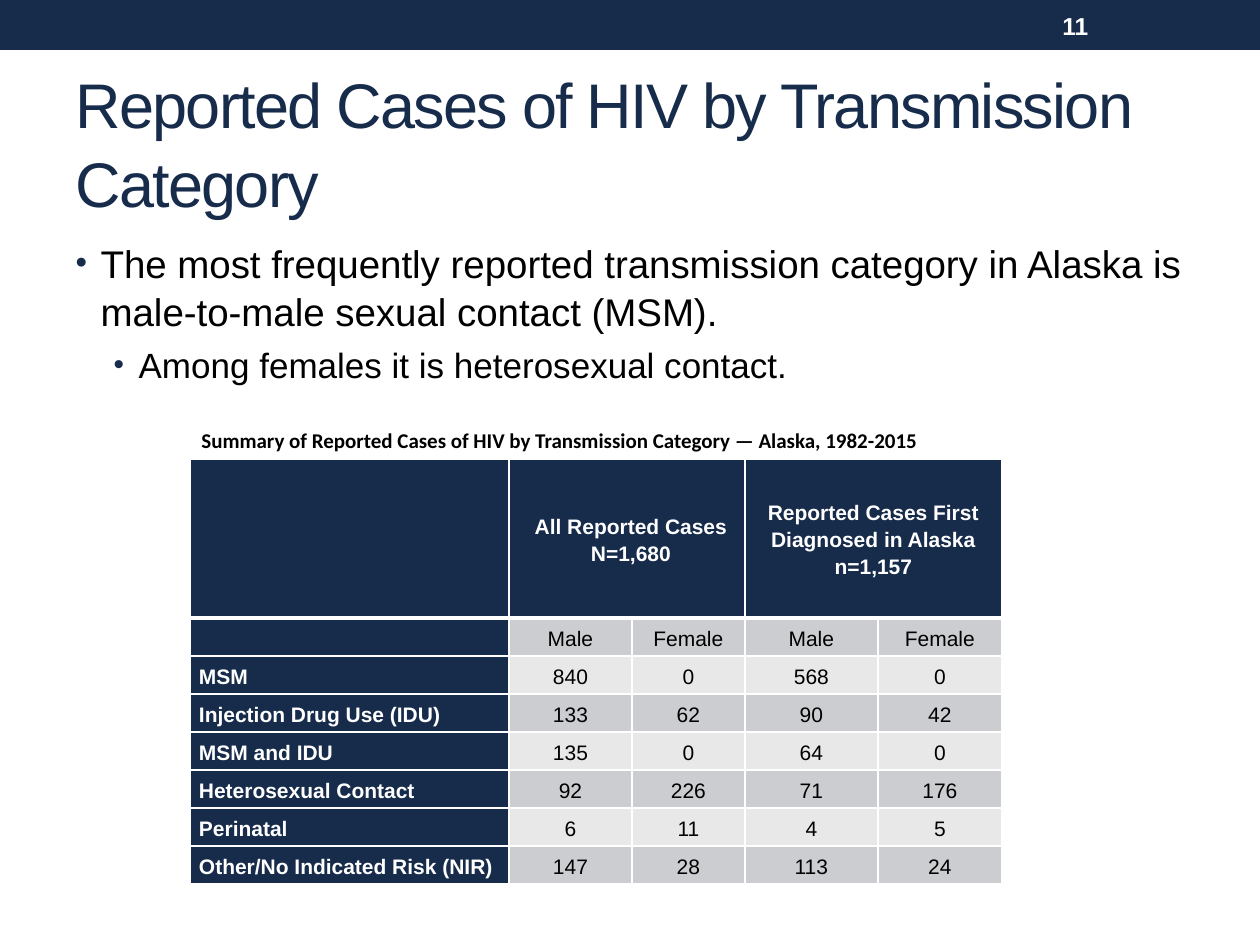
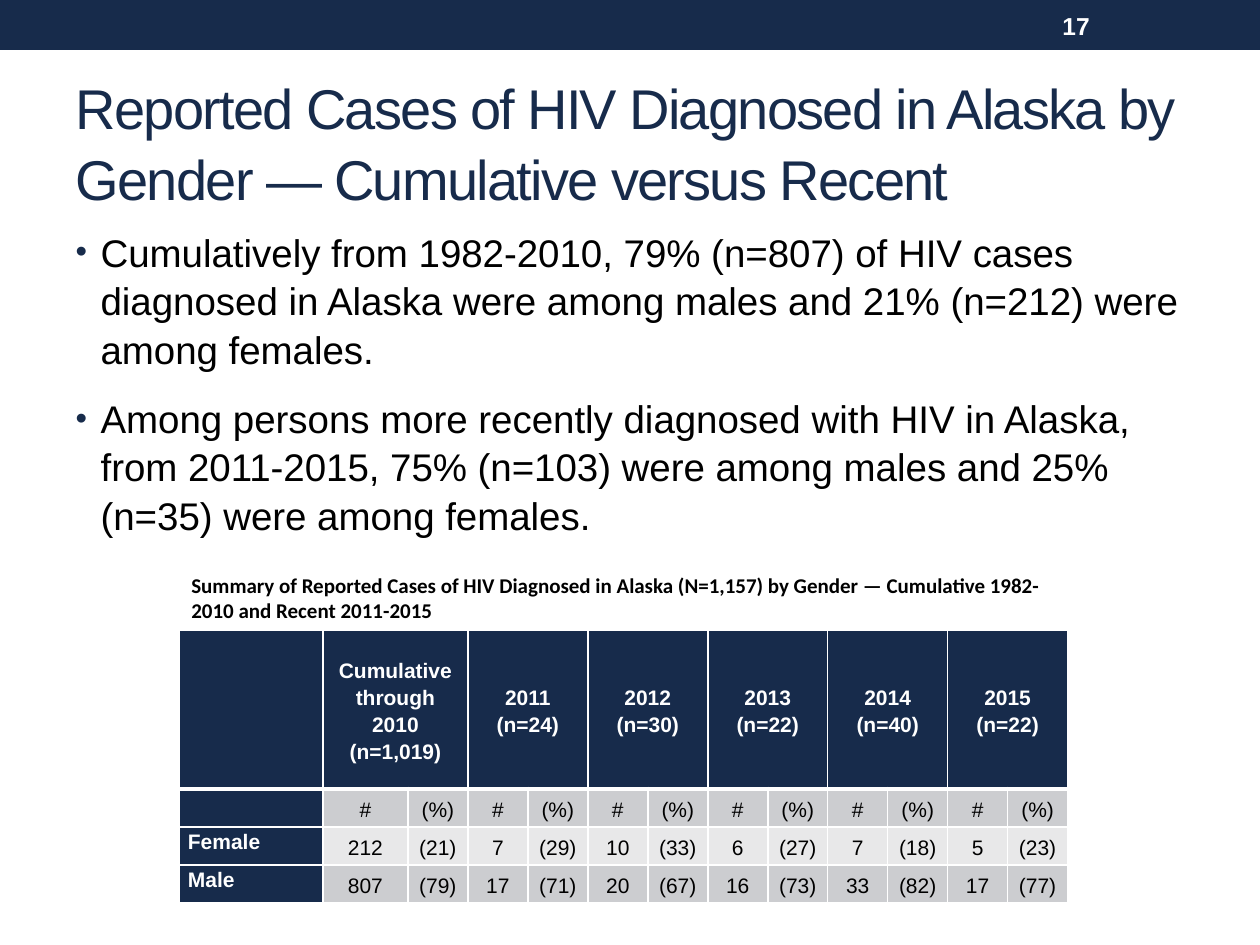
import pptx
import pptx.dml.color
import pptx.enum.shapes
import pptx.enum.text
import pptx.oxml
import pptx.oxml.ns
import pptx.util

PX = 7257.14  # EMU per px, 126 px to the inch
NAVY, WHITE, BLACK = "172B4B", "FFFFFF", "000000"
BANDS = ("CCCDD0", "E8E8E9")
HEADER_HEIGHT, ROW_HEIGHT = 159, 38
ALIGN = pptx.enum.text.PP_ALIGN
ANCHOR = pptx.enum.text.MSO_ANCHOR


def px(*lengths):
    return [pptx.util.Emu(round(length * PX)) for length in lengths]


def write(frame, text, colour, font, paragraph_format=None, **frame_format):
    """Fill a text frame or cell, one paragraph a line, in one format."""
    for name, value in frame_format.items():
        setattr(frame, name, value)
    frame.text = text
    for paragraph in getattr(frame, "text_frame", frame).paragraphs:
        for name, value in (paragraph_format or {}).items():
            setattr(paragraph, name, value)
        for run in paragraph.runs:
            run.font.color.rgb = pptx.dml.color.RGBColor.from_string(colour)
            for name, value in font.items():
                setattr(run.font, name, value)
        if not paragraph.runs:
            paragraph._p.get_or_add_endParaRPr().set("sz", str(font["size"].centipoints))


def add_xml(parent, *fragments):
    namespace = pptx.oxml.ns.nsdecls("a")
    for fragment in fragments:
        tag, rest = fragment.split(" ", 1)
        parent.append(pptx.oxml.parse_xml(f"<a:{tag} {namespace} {rest}"))


def font_format(size, bold=False, name="Arial"):
    return {"size": pptx.util.Pt(size), "bold": bold, "name": name}


slides = [
    {
        "number": "11",
        "title": "Reported Cases of HIV by Transmission Category",
        "title_size": 36,
        "body_box": (63, 231, 1134, 179),
        "space_before": 4,
        "bullets": [
            (0, "The most frequently reported transmission category in Alaska is "
                "male-to-male sexual contact (MSM)."),
            (1, "Among females it is heterosexual contact."),
        ],
        "caption": "Summary of Reported Cases of HIV by Transmission Category — Alaska, 1982-2015",
        "caption_box": (189, 421, 750, 38),
        "table_corner": (190, 459),
        "columns": [319, 123, 113, 133, 124],
        "header_indents": [8, 0],
        "headers": ["All Reported Cases\nN=1,680",
                    "Reported Cases First Diagnosed in Alaska\nn=1,157"],
        "label_anchor": ANCHOR.MIDDLE,
        "rows": [
            ["", "Male", "Female", "Male", "Female"],
            ["MSM", "840", "0", "568", "0"],
            ["Injection Drug Use (IDU)", "133", "62", "90", "42"],
            ["MSM and IDU", "135", "0", "64", "0"],
            ["Heterosexual Contact", "92", "226", "71", "176"],
            ["Perinatal", "6", "11", "4", "5"],
            ["Other/No Indicated Risk (NIR)", "147", "28", "113", "24"],
        ],
    },
    {
        "number": "17",
        "title": "Reported Cases of HIV Diagnosed in Alaska by Gender — Cumulative versus Recent",
        "title_size": 32,
        "body_box": (63, 220, 1134, 345),
        "space_before": 12,
        "bullets": [
            (0, "Cumulatively from 1982-2010, 79% (n=807) of HIV cases diagnosed in Alaska "
                "were among males and 21% (n=212) were among females."),
            (0, "Among persons more recently diagnosed with HIV in Alaska, from 2011-2015, "
                "75% (n=103) were among males and 25% (n=35) were among females."),
        ],
        "caption": "Summary of Reported Cases of HIV Diagnosed in Alaska (N=1,157) by Gender — "
                   "Cumulative 1982-2010 and Recent 2011-2015",
        "caption_box": (179, 566, 882, 63),
        "table_corner": (179, 630),
        "columns": [144, 85] + [60] * 11,
        "header_indents": [0] * 6,
        "headers": ["Cumulative through 2010 (n=1,019)", "2011\n(n=24)", "2012\n(n=30)",
                    "2013\n(n=22)", "2014\n(n=40)", "2015\n(n=22)"],
        "label_anchor": ANCHOR.TOP,
        "rows": [
            [""] + ["#", "(%)"] * 6,
            ["Female", "212", "(21)", "7", "(29)", "10", "(33)", "6", "(27)",
             "7", "(18)", "5", "(23)"],
            ["Male", "807", "(79)", "17", "(71)", "20", "(67)", "16", "(73)",
             "33", "(82)", "17", "(77)"],
        ],
    },
]

presentation = pptx.Presentation()
presentation.slide_width, presentation.slide_height = px(1260, 945)
layout = presentation.slide_layouts[1]
navy = pptx.dml.color.RGBColor.from_string(NAVY)

for index, content in enumerate(slides):
    slide = presentation.slides.add_slide(layout)

    # The band is drawn once and moved to the layout that both slides share
    if index == 0:
        band = slide.shapes.add_shape(
            pptx.enum.shapes.MSO_SHAPE.RECTANGLE, *px(0, 0, 1260, 50))
        band.shadow.inherit = False
        band.fill.solid()
        band.fill.fore_color.rgb = navy
        band.line.fill.background()
        layout.shapes._spTree.insert(2, band._element)

    title, body = slide.placeholders
    title.left, title.top, title.width, title.height = px(63, 73, 1134, 136)
    write(title.text_frame, content["title"], NAVY, font_format(content["title_size"]),
          {"alignment": ALIGN.LEFT, "line_spacing": 1.05},
          vertical_anchor=ANCHOR.MIDDLE, auto_size=pptx.enum.text.MSO_AUTO_SIZE.NONE)
    for run in title.text_frame.paragraphs[0].runs:
        run._r.get_or_add_rPr().set("spc", "-100")

    body.left, body.top, body.width, body.height = px(*content["body_box"])
    write(body.text_frame, "\n".join(text for level, text in content["bullets"]),
          BLACK, font_format(22),
          {"line_spacing": 1.05, "space_before": pptx.util.Pt(content["space_before"])},
          auto_size=pptx.enum.text.MSO_AUTO_SIZE.NONE)
    for paragraph, (level, text) in zip(body.text_frame.paragraphs, content["bullets"]):
        paragraph.level = level
        paragraph.runs[0].font.size = pptx.util.Pt(22 - 2 * level)
        margin, indent = px(25 + 38 * level, -25)
        properties = paragraph._p.get_or_add_pPr()
        properties.set("marL", str(margin))
        properties.set("indent", str(indent))
        add_xml(properties, f'buClr ><a:srgbClr val="{NAVY}"/></a:buClr>',
                'buSzPct val="85000"/>', 'buFont typeface="Arial"/>', 'buChar char="•"/>')

    for text, box, colour, font in (
        (content["number"], (1050, 3, 147, 45), WHITE, font_format(14, True)),
        (content["caption"], content["caption_box"], BLACK, font_format(12, True, "Calibri")),
    ):
        text_box = slide.shapes.add_textbox(*px(*box))
        write(text_box.text_frame, text, colour, font,
              word_wrap=True, vertical_anchor=ANCHOR.MIDDLE)

    columns = content["columns"]
    heights = [HEADER_HEIGHT] + [ROW_HEIGHT] * len(content["rows"])
    table = slide.shapes.add_table(
        len(heights), len(columns),
        *px(*content["table_corner"], sum(columns), sum(heights))).table
    for column, width in zip(table.columns, px(*columns)):
        column.width = width
    for row, height in zip(table.rows, px(*heights)):
        row.height = height

    # Each header stands over two columns
    header_row = [""]
    for header in content["headers"]:
        header_row += [header, ""]
    for row_index, row in enumerate([header_row] + content["rows"]):
        for column_index, text in enumerate(row):
            cell = table.cell(row_index, column_index)
            is_label = column_index == 0
            is_dark = is_label or row_index == 0
            for side in "LRTB":
                thick = (row_index, side) in ((0, "B"), (1, "T"))
                add_xml(cell._tc.get_or_add_tcPr(),
                        f'ln{side} w="{38100 if thick else 12700}"><a:solidFill>'
                        f'<a:srgbClr val="{WHITE}"/></a:solidFill></a:ln{side}>')
            cell.fill.solid()
            cell.fill.fore_color.rgb = pptx.dml.color.RGBColor.from_string(
                NAVY if is_dark else BANDS[(row_index - 1) % 2])
            write(cell, text, WHITE if is_dark else BLACK, font_format(12, is_dark),
                  {"alignment": ALIGN.LEFT if is_label else ALIGN.CENTER, "line_spacing": 1.15},
                  vertical_anchor=content["label_anchor"] if is_label else ANCHOR.MIDDLE,
                  margin_left=px(9)[0], margin_right=px(9)[0], margin_top=0, margin_bottom=0)

    for pair, header_indent in enumerate(content["header_indents"]):
        cell = table.cell(0, 1 + 2 * pair)
        cell.merge(table.cell(0, 2 + 2 * pair))
        for paragraph in cell.text_frame.paragraphs:
            paragraph._p.get_or_add_pPr().set("indent", str(px(header_indent)[0]))

presentation.save("out.pptx")
